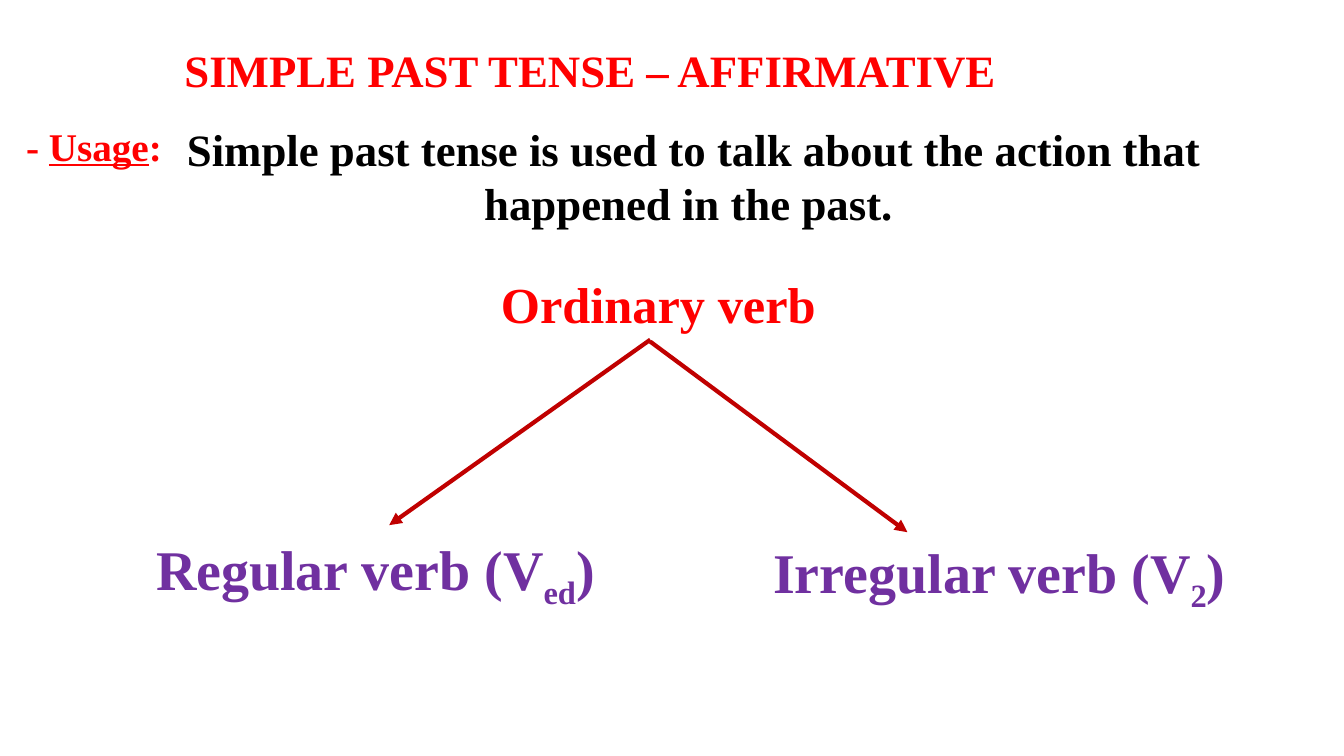
from pptx import Presentation
from pptx.dml.color import RGBColor
from pptx.enum.shapes import MSO_CONNECTOR
from pptx.enum.text import MSO_AUTO_SIZE, PP_ALIGN
from pptx.oxml.ns import qn
from pptx.util import Pt
from lxml import etree

LINE = MSO_CONNECTOR.STRAIGHT
LEFT, MID = PP_ALIGN.LEFT, PP_ALIGN.CENTER
GROW = MSO_AUTO_SIZE.SHAPE_TO_FIT_TEXT
PX = 9144  # 100 px to the inch
RED, BLACK, PURPLE, DARK = "FF0000", "000000", "7030A0", "C00000"


def color(code):
    return RGBColor.from_string(code)


deck = Presentation()
deck.slide_width, deck.slide_height = 1333 * PX, 750 * PX
slide = deck.slides.add_slide(deck.slide_layouts[6])

# Texts: box, size, color, alignment, runs with their style
texts = [
    ((173, 37, 1031, 64), 32, RED, LEFT,
     [("SIMPLE PAST TENSE – AFFIRMATIVE", "")]),
    ((16, 116, 183, 57), 28, RED, LEFT,
     [("- ", ""), ("Usage", "under"), (":", "")]),
    ((108, 116, 1161, 118), 32, BLACK, MID,
     [("Simple past tense is used to talk about the action that "
       "happened in the past. ", "")]),
    ((487, 266, 507, 71), 36, RED, LEFT, [("Ordinary verb", "")]),
    ((145, 525, 493, 77), 40, PURPLE, LEFT,
     [("Regular verb (V", ""), ("ed", "sub"), (")", "")]),
    ((757, 528, 552, 77), 40, PURPLE, LEFT,
     [("Irregular verb (V", ""), ("2", "sub"), (")", "")]),
]
for box, size, hue, align, parts in texts:
    frame = slide.shapes.add_textbox(*[n * PX for n in box]).text_frame
    frame.word_wrap = True
    frame.auto_size = GROW
    para = frame.paragraphs[0]
    para.alignment = align
    for words, style in parts:
        run = para.add_run()
        run.text = words
        font = run.font
        font.name, font.size, font.bold = "Times New Roman", Pt(size), True
        font.color.rgb = color(hue)
        if style == "under":
            font.underline = True
        elif style == "sub":
            run._r.get_or_add_rPr().set("baseline", "-25000")

# Arrows from the ordinary verb to its two kinds
for ends in [(645, 337, 386, 521), (645, 339, 900, 528)]:
    arrow = slide.shapes.add_connector(LINE, *[n * PX for n in ends])
    arrow.line.color.rgb = color(DARK)
    arrow.line.width = Pt(3)
    etree.SubElement(arrow.line._get_or_add_ln(), qn("a:tailEnd"), type="triangle")
    etree.SubElement(arrow._element.spPr, qn("a:effectLst"))

deck.save("out.pptx")
